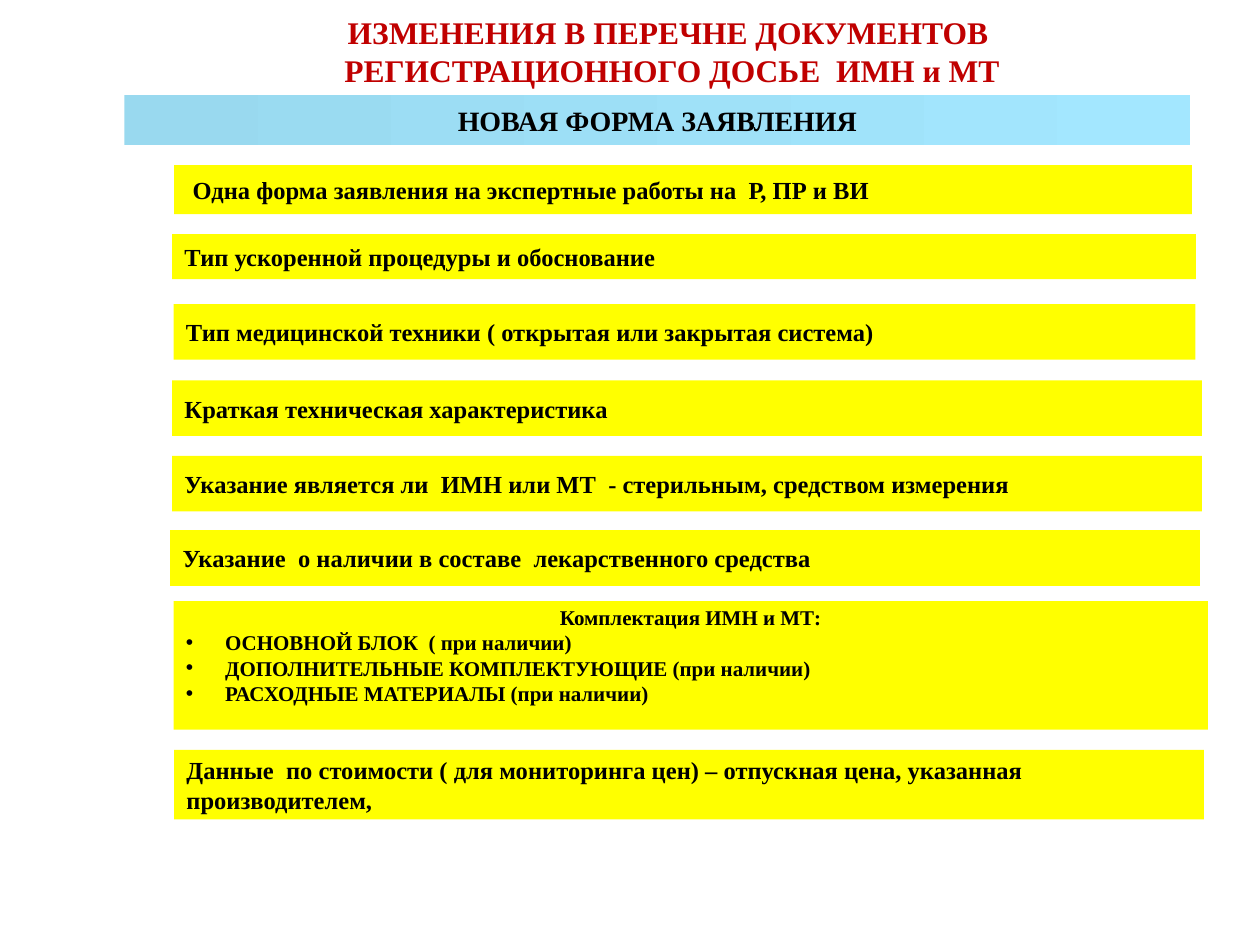
"""Build a slide listing the changes to the registration dossier application form."""
import pptx
import pptx.dml.color
import pptx.enum.shapes
import pptx.enum.text
import pptx.util
from lxml import etree

Cm = pptx.util.Cm
RGBColor = pptx.dml.color.RGBColor
ALIGN = pptx.enum.text.PP_ALIGN
ANCHOR = pptx.enum.text.MSO_ANCHOR

RED = RGBColor(0xC0, 0x00, 0x00)
BLACK = RGBColor(0x00, 0x00, 0x00)
YELLOW = RGBColor(0xFF, 0xFF, 0x00)
BANNER_COLORS = (RGBColor(0x99, 0xD9, 0xEF), RGBColor(0xA3, 0xE7, 0xFF))
FONT = "Times New Roman"

TITLE = "ИЗМЕНЕНИЯ В ПЕРЕЧНЕ ДОКУМЕНТОВ \vРЕГИСТРАЦИОННОГО ДОСЬЕ  ИМН и МТ"
TITLE_AREA = (2.97, 0.33, 21.16, 1.4)
BANNER = "НОВАЯ ФОРМА ЗАЯВЛЕНИЯ"
BANNER_AREA = (2.51, 1.92, 21.49, 1)
ITEMS = [
    (" Одна форма заявления на экспертные работы на  Р, ПР и ВИ", (3.51, 3.33, 20.52, 0.99)),
    ("Тип ускоренной процедуры и обоснование", (3.47, 4.72, 20.64, 0.91)),
    ("Тип медицинской техники ( открытая или закрытая система)", (3.5, 6.13, 20.6, 1.12)),
    ("Краткая техническая характеристика", (3.47, 7.67, 20.76, 1.12)),
    ("Указание является ли  ИМН или МТ  - стерильным, средством измерения",
     (3.47, 9.19, 20.76, 1.12)),
    ("Указание  о наличии в составе  лекарственного средства", (3.43, 10.69, 20.76, 1.12)),
    ("Данные  по стоимости ( для мониторинга цен) – отпускная цена, указанная производителем,",
     (3.51, 15.12, 20.76, 1.4)),
]
KIT_HEADING = "Комплектация ИМН и МТ:"
KIT_PARTS = [
    "ОСНОВНОЙ БЛОК  ( при наличии)",
    "ДОПОЛНИТЕЛЬНЫЕ КОМПЛЕКТУЮЩИЕ (при наличии)",
    "РАСХОДНЫЕ МАТЕРИАЛЫ (при наличии)",
]
KIT_AREA = (3.5, 12.12, 20.85, 2.59)
BULLET_INDENT = Cm(0.79)


def place(shape, area):
    for name, value in zip(("left", "top", "width", "height"), area):
        setattr(shape, name, Cm(value))


def write(para, text, size, align, color=BLACK):
    para.text = text
    para.alignment = align
    style = {"name": FONT, "size": pptx.util.Pt(size), "bold": True}
    for span in para.runs:
        for name, value in style.items():
            setattr(span.font, name, value)
        span.font.color.rgb = color


def add_bullet(para):
    properties = para._p.get_or_add_pPr()
    properties.set("marL", str(BULLET_INDENT))
    properties.set("indent", str(-BULLET_INDENT))
    namespace = pptx.oxml.ns.nsdecls("a")
    for markup in (f'<a:buFont {namespace} typeface="Arial"/>',
                   f'<a:buChar {namespace} char="•"/>'):
        properties.append(pptx.oxml.parse_xml(markup))


def add_bar(page, area):
    bar = page.shapes.add_shape(
        pptx.enum.shapes.MSO_SHAPE.RECTANGLE, *(Cm(value) for value in area))
    bar.shadow.inherit = False
    bar.line.fill.background()
    bar.fill.solid()
    bar.fill.fore_color.rgb = YELLOW
    bar.text_frame.word_wrap = True
    bar.text_frame.vertical_anchor = ANCHOR.MIDDLE
    return bar


def add_title(page):
    title = page.shapes.title
    place(title, TITLE_AREA)
    title.text_frame.auto_size = pptx.enum.text.MSO_AUTO_SIZE.NONE
    title.text_frame.vertical_anchor = ANCHOR.MIDDLE
    write(title.text_frame.paragraphs[0], TITLE, 18, ALIGN.CENTER, RED)


def add_banner(page):
    banner = add_bar(page, BANNER_AREA)
    banner.fill.gradient()
    banner.fill.gradient_angle = 0
    for stop, color in zip(banner.fill.gradient_stops, BANNER_COLORS):
        stop.color.rgb = color
    write(banner.text_frame.paragraphs[0], BANNER, 16, ALIGN.CENTER)


def add_kit(page):
    frame = add_bar(page, KIT_AREA).text_frame
    frame.vertical_anchor = ANCHOR.TOP
    frame.margin_top = Cm(0.07)
    write(frame.paragraphs[0], KIT_HEADING, 12, ALIGN.CENTER)
    for part in KIT_PARTS:
        para = frame.add_paragraph()
        write(para, part, 12, ALIGN.LEFT)
        add_bullet(para)


def main():
    deck = pptx.Presentation()
    deck.slide_width, deck.slide_height = Cm(25.4), Cm(19.05)
    page = deck.slides.add_slide(deck.slide_layouts[5])
    add_title(page)
    add_banner(page)
    for text, area in ITEMS:
        write(add_bar(page, area).text_frame.paragraphs[0], text, 14, ALIGN.LEFT)
    add_kit(page)
    deck.save("out.pptx")


if __name__ == "__main__":
    main()
